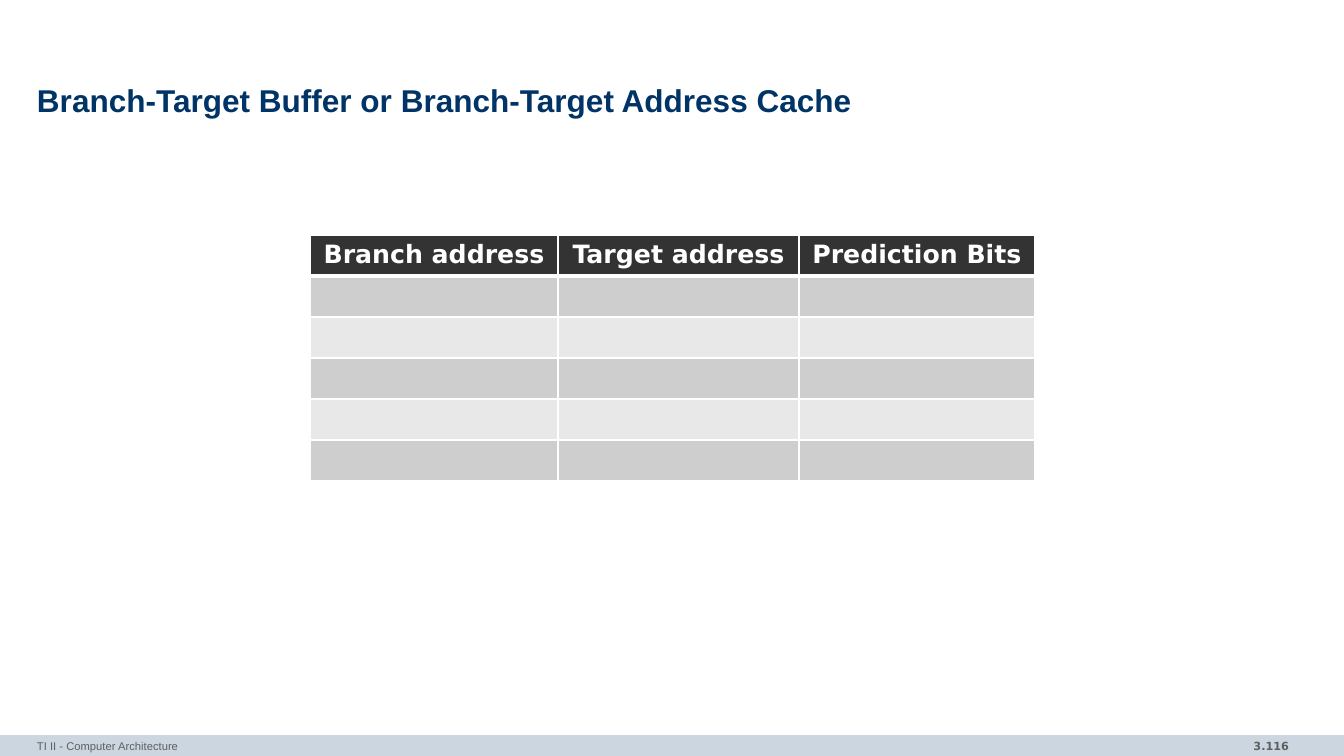
"""Build the slide on the branch-target buffer."""
import pptx
import pptx.util
import pptx.dml.color
import pptx.enum.shapes
import pptx.enum.text
import pptx.oxml

HUES = {
    "navy": "003366", "bar": "CCD6E0", "gray": "5F5F5F", "white": "FFFFFF",
    "head": "333333", "dark": "CECECE", "light": "E8E8E8",
}
SCALE = 914400 / 100.8
ALIGN = pptx.enum.text.PP_ALIGN


def hue(name):
    return pptx.dml.color.RGBColor.from_string(HUES[name])


def write(frame, text, size, color, font="Arial", bold=False,
          align=ALIGN.LEFT, inset=None, space=None):
    if inset is not None:
        sides = ("left", "top", "right", "bottom")
        for side, gap in zip(sides, inset):
            setattr(frame, f"margin_{side}", round(gap * SCALE))
    para = frame.paragraphs[0]
    para.alignment = align
    para.line_spacing = space
    run = para.add_run()
    run.text = text
    run.font.name = font
    run.font.size = pptx.util.Pt(size)
    run.font.bold = bold
    run.font.color.rgb = hue(color)


deck = pptx.Presentation()
deck.slide_width = round(1344 * SCALE)
deck.slide_height = round(756 * SCALE)
slide = deck.slides.add_slide(deck.slide_layouts[5])
shapes = slide.shapes

bar = shapes.add_shape(pptx.enum.shapes.MSO_SHAPE.RECTANGLE,
                       *[round(n * SCALE) for n in (0, 735, 1344, 21)])
bar.shadow.inherit = False
bar.fill.solid()
bar.fill.fore_color.rgb = hue("bar")
bar.line.fill.background()

title = shapes.title
title.left, title.top, title.width, title.height = [
    round(n * SCALE) for n in (37, 79, 1270, 47)]
title.text_frame.word_wrap = True
title.text_frame.auto_size = pptx.enum.text.MSO_AUTO_SIZE.NONE
title.text_frame.vertical_anchor = pptx.enum.text.MSO_ANCHOR.MIDDLE
write(title.text_frame, "Branch-Target Buffer or Branch-Target Address Cache",
      22.5, "navy", bold=True, inset=(0, 0, 0, 0), space=0.85)

course = shapes.add_textbox(*[round(n * SCALE) for n in (37, 734, 879, 22)])
course.text_frame.word_wrap = True
write(course.text_frame, "TI II - Computer Architecture", 8, "gray",
      inset=(0, 5, 0, 5))

page = shapes.add_textbox(*[round(n * SCALE) for n in (1119, 734, 180, 23)])
page.text_frame.word_wrap = True
write(page.text_frame, "3.116", 8, "gray", font="DejaVu Sans", bold=True,
      align=ALIGN.RIGHT)

heads = ["Branch address", "Target address", "Prediction Bits"]
wides = [248, 241, 236]
rows, high = 6, 41
table = shapes.add_table(rows, len(heads), *[
    round(n * SCALE) for n in (310, 235, sum(wides), rows * high)]).table
for col, wide in zip(table.columns, wides):
    col.width = round(wide * SCALE)

for row in range(rows):
    fill = "head" if row == 0 else "dark" if row % 2 else "light"
    for col, head in enumerate(heads):
        cell = table.cell(row, col)
        props = cell._tc.get_or_add_tcPr()
        for side in "LRTB":
            thick = 3 if (row, side) in ((0, "B"), (1, "T")) else 1
            props.append(pptx.oxml.parse_xml(
                f'<a:ln{side} xmlns:a="http://schemas.openxmlformats.org/'
                f'drawingml/2006/main" w="{pptx.util.Pt(thick)}"><a:solidFill>'
                f'<a:srgbClr val="{HUES["white"]}"/></a:solidFill></a:ln{side}>'))
        cell.fill.solid()
        cell.fill.fore_color.rgb = hue(fill)
        if row == 0:
            write(cell.text_frame, head, 18, "white", font="DejaVu Sans",
                  bold=True, align=ALIGN.CENTER)

deck.save("out.pptx")
